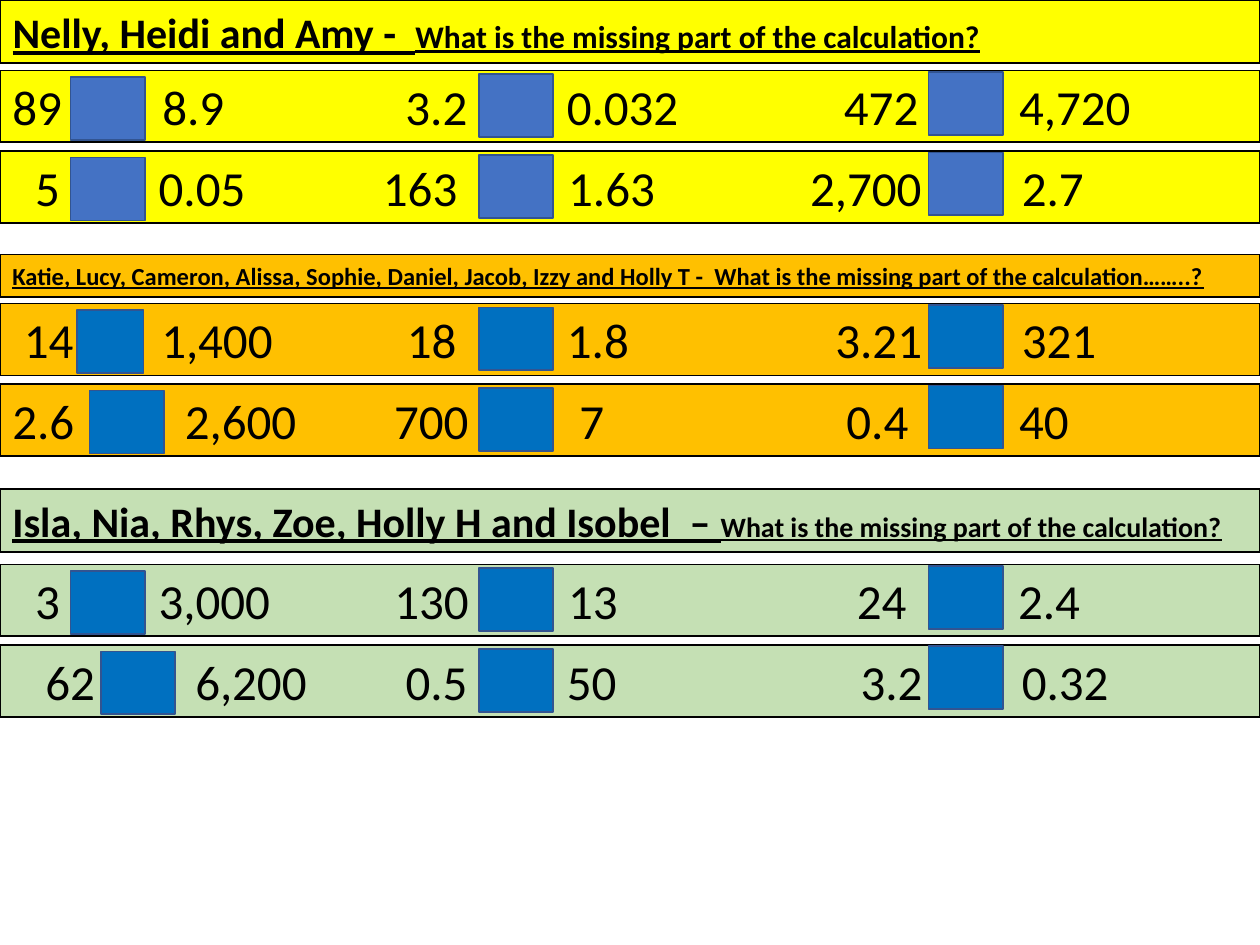
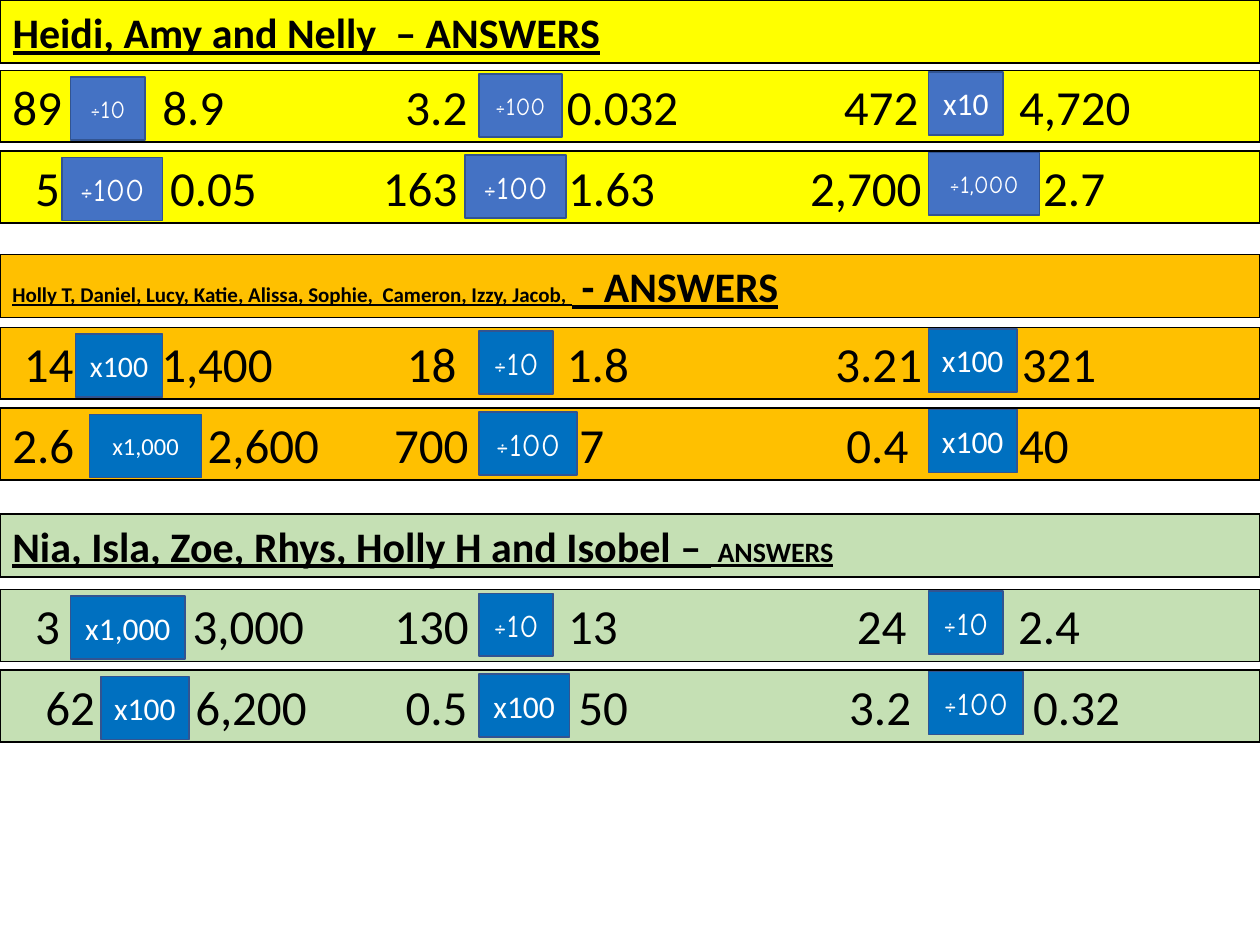
from lxml import etree
from pptx import Presentation
from pptx import util as u
from pptx.dml.color import RGBColor
from pptx.enum import shapes, text
from pptx.oxml import ns

COLOURS = {
    "yellow": "FFFF00", "orange": "FFC000", "green": "C5E0B4",
    "indigo": "4472C4", "blue": "0070C0", "box line": "325491",
    "black": "000000", "white": "FFFFFF",
}
BODY_FONT, SYMBOL_FONT = "Calibri", "Comic Neue"
ROW_HEIGHT, ROW_PITCH = 0.57, 0.64
TEXT_INSET = 0.1
BOX_HEIGHT, BOX_WIDTH = 0.5, 0.59
BOX_LEFTS = (0.56, 3.8, 7.37)
BOX_DROPS = (0.05, 0.03, 0.01)  # below the top of the row, by column
QUESTION = "What is the missing part of the calculation?"

# Each group: band colour, box colour, and two rows of three number pairs
GROUPS = [
    ("yellow", "indigo", ["89 8.9 3.2 0.032 472 4,720",
                          "5 0.05 163 1.63 2,700 2.7"]),
    ("orange", "blue", ["14 1,400 18 1.8 3.21 321",
                        "2.6 2,600 700 7 0.4 40"]),
    ("green", "blue", ["3 3,000 130 13 24 2.4",
                       "62 6,200 0.5 50 3.2 0.32"]),
]

# Each section: heading top and height, heading runs, top of the first row,
# then for each row the number positions and the boxes.
# A box is a dict of what differs from an empty box in its column.
QUESTIONS = [
    (0, 0.5, [("Nelly, Heidi and Amy -  ", 24), (QUESTION, 18)], 0.56, [
        ((0, 1.19, 3.12, 4.4, 6.6, 7.99), ({}, {}, {})),
        ((0.18, 1.16, 2.94, 4.41, 6.33, 8.01), ({}, {}, {})),
    ]),
    (2.02, 0.34, [("Katie, Lucy, Cameron, Alissa, Sophie, Daniel, Jacob, Izzy "
                   "and Holly T -  What is the missing part of the "
                   "calculation……..?", 14)], 2.41, [
        ((0.09, 1.18, 3.13, 4.4, 6.53, 8.01),
         ({"left": 0.61, "width": 0.53}, {}, {})),
        ((0, 1.37, 3.03, 4.5, 6.62, 7.99), ({"left": 0.71}, {}, {})),
    ]),
    (3.88, 0.5, [("Isla, Nia, Rhys, Zoe, Holly H and Isobel  – ", 24),
                 (QUESTION, 16)], 4.48, [
        ((0.18, 1.16, 3.03, 4.41, 6.7, 7.98), ({}, {}, {})),
        ((0.26, 1.45, 3.12, 4.4, 6.73, 8.01), ({"left": 0.8}, {}, {})),
    ]),
]

ANSWERS = [
    (0, 0.5, [("Heidi, Amy and Nelly  – ANSWERS", 24)], 0.56, [
        ((0, 1.19, 3.12, 4.4, 6.6, 7.99),
         ({"label": "÷10", "size": 14},
          {"label": "÷100", "size": 14, "width": 0.66},
          {"label": "x10"})),
        ((0.18, 1.25, 2.94, 4.41, 6.33, 8.18),
         ({"label": "÷100", "left": 0.49, "width": 0.8},
          {"label": "÷100", "left": 3.69, "width": 0.8},
          {"label": "÷1,000", "size": 14, "width": 0.88})),
    ]),
    (2.02, 0.5, [("Holly T, Daniel, Lucy, Katie, Alissa, Sophie,  Cameron, "
                  "Izzy, Jacob, ", 12), (" - ANSWERS", 24)], 2.6, [
        ((0.09, 1.18, 3.13, 4.4, 6.53, 8.01),
         ({"label": "x100", "size": 17, "left": 0.6, "width": 0.69},
          {"label": "÷10"},
          {"label": "x100", "width": 0.7})),
        ((0, 1.55, 3.03, 4.5, 6.62, 7.99),
         ({"label": "x1,000", "size": 14, "left": 0.71, "width": 0.89},
          {"label": "÷100", "width": 0.78},
          {"label": "x100", "width": 0.7})),
    ]),
    (4.08, 0.5, [("Nia, Isla, Zoe, Rhys, Holly H and Isobel – ", 24),
                 (" ANSWERS", 16)], 4.68, [
        ((0.18, 1.43, 3.03, 4.41, 6.7, 7.98),
         ({"label": "x1,000", "width": 0.91},
          {"label": "÷10"},
          {"label": "÷10"})),
        ((0.26, 1.45, 3.12, 4.49, 6.64, 8.1),
         ({"label": "x100", "left": 0.8, "width": 0.7},
          {"label": "x100", "width": 0.72},
          {"label": "÷100", "width": 0.75})),
    ]),
]


def rgb(name):
    return RGBColor.from_string(COLOURS[name])


def paint(shape, fill, line):
    shape.fill.solid()
    shape.fill.fore_color.rgb = rgb(fill)
    shape.line.color.rgb = rgb(line)
    shape.line.width = u.Pt(1)


def add_rectangle(page, left, top, width, height, fill, line):
    shape = page.shapes.add_shape(
        shapes.MSO_SHAPE.RECTANGLE,
        *(u.Inches(length) for length in (left, top, width, height)))
    shape.shadow.inherit = False
    paint(shape, fill, line)
    return shape


def add_span(para, words, size, colour="black", font=BODY_FONT, heading=False):
    span = para.add_run()
    span.text = words
    span.font.name = font
    span.font.size = u.Pt(size)
    span.font.color.rgb = rgb(colour)
    span.font.bold = span.font.underline = heading


def top_left_paragraph(shape):
    frame = shape.text_frame
    frame.word_wrap = True
    frame.auto_size = text.MSO_AUTO_SIZE.NONE
    frame.vertical_anchor = text.MSO_ANCHOR.TOP
    para = frame.paragraphs[0]
    para.alignment = text.PP_ALIGN.LEFT
    return para


def add_tab_stops(para, stops):
    tabs = etree.SubElement(para._p.get_or_add_pPr(), ns.qn("a:tabLst"))
    for stop in stops:
        etree.SubElement(tabs, ns.qn("a:tab"),
                         pos=str(u.Inches(stop)), algn="l")


def add_heading(page, top, height, runs, colour, width):
    if top == 0:
        band = page.shapes.title
        band.left, band.top = 0, 0
        band.width, band.height = u.Inches(width), u.Inches(height)
        paint(band, colour, "black")
    else:
        band = add_rectangle(page, 0, top, width, height, colour, "black")
    para = top_left_paragraph(band)
    for words, size in runs:
        add_span(para, words, size, heading=True)


def add_number_row(page, top, numbers, positions, colour, width):
    """Inset the band to the first number and tab to each later one."""
    band = add_rectangle(page, 0, top, width, ROW_HEIGHT, colour, "black")
    first, *later = positions
    band.text_frame.margin_left = u.Inches(TEXT_INSET + first)
    para = top_left_paragraph(band)
    add_tab_stops(para, [position - first for position in later])
    add_span(para, "\t".join(numbers.split()), 28)


def add_operation_box(page, left, top, colour, width=BOX_WIDTH,
                      label="", size=18):
    box = add_rectangle(page, left, top, width, BOX_HEIGHT, colour, "box line")
    if label:
        box.text_frame.vertical_anchor = text.MSO_ANCHOR.MIDDLE
        para = box.text_frame.paragraphs[0]
        para.alignment = text.PP_ALIGN.CENTER
        font = SYMBOL_FONT if label.startswith("÷") else BODY_FONT
        add_span(para, label, size, "white", font)


def add_section(page, group, section, width):
    band_colour, box_colour, calculations = group
    top, height, runs, first_row, rows = section
    add_heading(page, top, height, runs, band_colour, width)
    for index, (numbers, (positions, boxes)) in enumerate(
            zip(calculations, rows)):
        row_top = first_row + index * ROW_PITCH
        add_number_row(page, row_top, numbers, positions, band_colour, width)
        for left, drop, box in zip(BOX_LEFTS, BOX_DROPS, boxes):
            add_operation_box(page, top=row_top + drop, colour=box_colour,
                              **{"left": left, **box})


def main():
    deck = Presentation()
    deck.slide_width, deck.slide_height = u.Inches(10), u.Inches(7.5)
    title_only = deck.slide_layouts[5]
    for sections in (QUESTIONS, ANSWERS):
        page = deck.slides.add_slide(title_only)
        for group, section in zip(GROUPS, sections):
            add_section(page, group, section, deck.slide_width.inches)
    deck.save("out.pptx")


if __name__ == "__main__":
    main()
